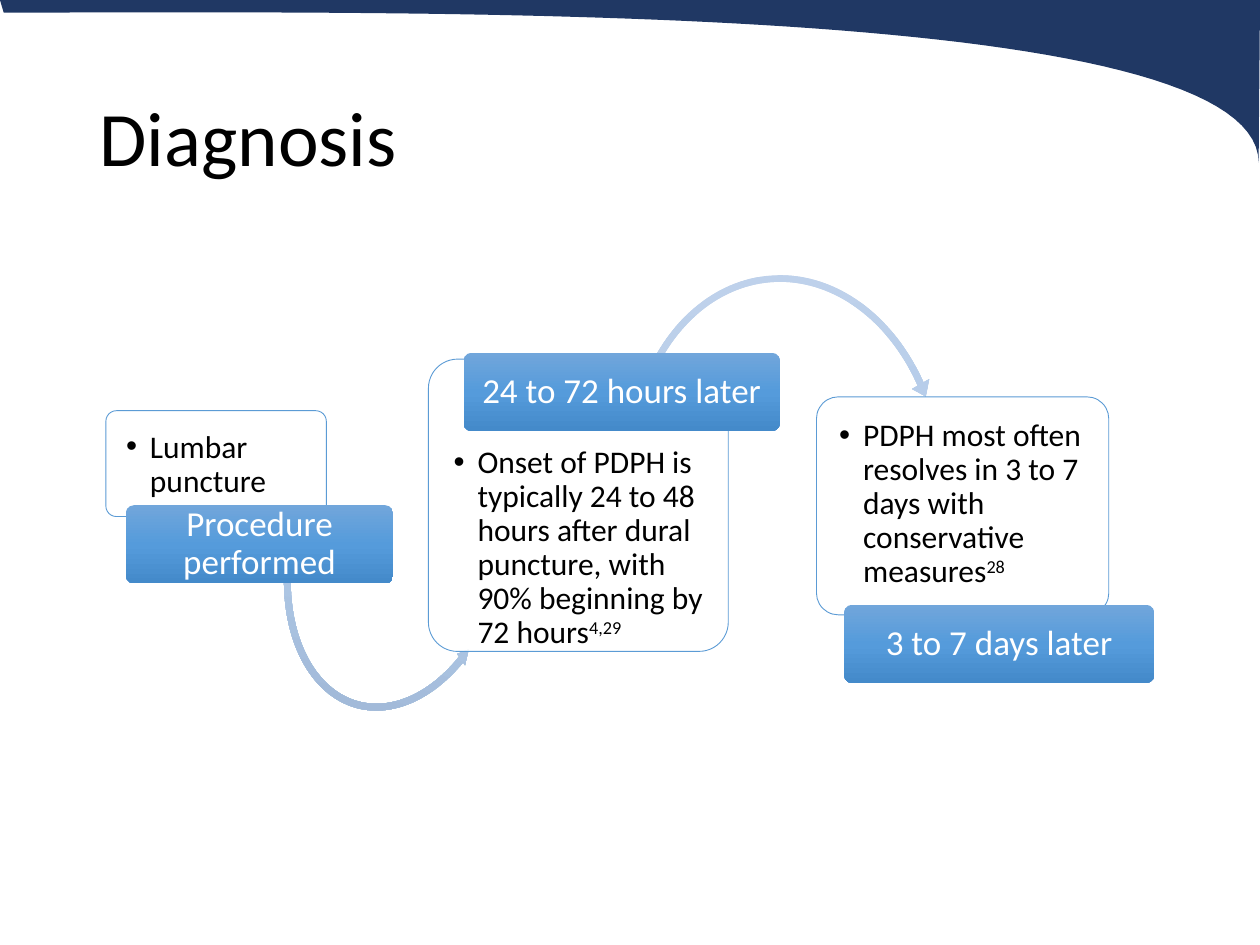
from copy import deepcopy

from lxml.etree import SubElement
from pptx import Presentation
from pptx.dml.color import RGBColor
from pptx.enum.shapes import MSO_SHAPE as Shape
from pptx.enum.text import MSO_ANCHOR as Anchor, MSO_AUTO_SIZE as AutoSize, PP_ALIGN as Align
from pptx.oxml.ns import qn
from pptx.util import Inches, Pt

COLORS = {
    "navy": "203864", "white": "FFFFFF", "black": "000000", "outline": "5B9BD5",
    "label_top": "71A6DB", "label_mid": "559BDB", "label_end": "448ACA",
    "arrow_top": "C0D2EB", "arrow_mid": "B3CBE9", "arrow_end": "9BB4D3",
}

STEPS = [
    {"card": (0.84, 3.26, 1.75, 0.84), "detail_box": (0.86, 3.28, 1.71, 0.62),
     "detail": "Lumbar puncture", "citation": "",
     "label_box": (1, 4.01, 2.12, 0.62), "label": "Procedure performed"},
    {"card": (3.4, 2.85, 2.38, 2.32), "detail_box": (3.46, 3.4, 2.27, 1.71),
     "detail": "Onset of PDPH is typically 24 to 48 hours after dural puncture, "
               "with 90% beginning by 72 hours", "citation": "4,29",
     "label_box": (3.68, 2.8, 2.51, 0.62), "label": "24 to 72 hours later"},
    {"card": (6.48, 3.15, 2.32, 1.73), "detail_box": (6.52, 3.19, 2.24, 1.28),
     "detail": "PDPH most often resolves in 3 to 7 days with conservative measures",
     "citation": "28",
     "label_box": (6.7, 4.8, 2.46, 0.62), "label": "3 to 7 days later"},
]

ARROWS = [
    {"kind": Shape.LEFT_CIRCULAR_ARROW, "box": (2.26, 3.02, 1.81, 2.67), "rotation": 14.6,
     "bend": (0.03, 3.25, 27.63, 96.87, 0.03)},
    {"kind": Shape.CIRCULAR_ARROW, "box": (4.93, 2.13, 2.62, 3.31), "rotation": 355.4,
     "bend": (0.02, 2.81, 197.97, 128.29, 0.03)},
]


def rgb(name):
    return RGBColor.from_string(COLORS[name])


def place(shape, box):
    shape.left, shape.top, shape.width, shape.height = map(Inches, box)


def write_text(shape, text, *, size, color, align=Align.LEFT, anchor=Anchor.MIDDLE,
               inset=(0.1, 0.05), bullet=False, superscript=""):
    frame = shape.text_frame
    frame.word_wrap = True
    frame.auto_size = AutoSize.NONE
    frame.vertical_anchor = anchor
    frame.margin_left = frame.margin_right = Inches(inset[0])
    frame.margin_top = frame.margin_bottom = Inches(inset[1])
    paragraph = frame.paragraphs[0]
    if bullet:
        properties = paragraph._p.get_or_add_pPr()
        properties.set("marL", str(Inches(0.19)))
        properties.set("indent", str(Inches(-0.19)))
        SubElement(properties, qn("a:buFont"), typeface="Arial")
        SubElement(properties, qn("a:buChar"), char="•")
    paragraph.alignment = align
    paragraph.line_spacing = 0.9
    paragraph.space_before = Pt(0)
    for part in filter(None, (text, superscript)):
        run = paragraph.add_run()
        run.text = part
        run.font.name = "Calibri"
        run.font.size = Pt(size)
        run.font.bold = False
        run.font.color.rgb = rgb(color)
    if superscript:
        run._r.get_or_add_rPr().set("baseline", "30000")


def fill_gradient(shape, family):
    shape.fill.gradient()
    shape.fill.gradient_angle = 270
    stop_list = shape._element.spPr.find(qn("a:gradFill")).find(qn("a:gsLst"))
    stop_list.insert(1, deepcopy(stop_list[0]))
    for index, part in enumerate(("top", "mid", "end")):
        stop = shape.fill.gradient_stops[index]
        stop.position = index / 2
        stop.color.rgb = rgb(f"{family}_{part}")


def add_plain_shape(slide, kind, box):
    shape = slide.shapes.add_shape(kind, *map(Inches, box))
    shape.shadow.inherit = False
    shape.line.fill.background()
    return shape


def add_card(slide, box):
    card = add_plain_shape(slide, Shape.ROUNDED_RECTANGLE, box)
    card.adjustments[0] = 0.1
    card.fill.solid()
    card.fill.fore_color.rgb = rgb("white")
    color = card._element.spPr.find(qn("a:solidFill"))[0]
    SubElement(color, qn("a:alpha"), val="90000")
    card.line.color.rgb = rgb("outline")
    card.line.width = Pt(0.5)


def add_label(slide, box, text):
    label = add_plain_shape(slide, Shape.ROUNDED_RECTANGLE, box)
    label.adjustments[0] = 0.1
    fill_gradient(label, "label")
    write_text(label, text, size=20, color="white", align=Align.CENTER, inset=(0.06, 0.05))


def add_arrow(slide, kind, box, rotation, bend):
    arrow = add_plain_shape(slide, kind, box)
    arrow.rotation = rotation
    for index, value in enumerate(bend):
        arrow.adjustments[index] = value
    fill_gradient(arrow, "arrow")


def curve_points(start, control_1, control_2, end, steps=60):
    for step in range(1, steps + 1):
        t = step / steps
        weights = ((1 - t) ** 3, 3 * t * (1 - t) ** 2, 3 * t ** 2 * (1 - t), t ** 3)
        yield tuple(
            sum(weight * value for weight, value in zip(weights, values))
            for values in zip(start, control_1, control_2, end)
        )


def add_swoosh(slide):
    corner, tip, tail = (10, 0), (9.99, 1.29), (0.03, 0.1)
    points = [
        corner,
        *curve_points(corner, (10, 0.14), (9.99, 1.15), tip),
        *curve_points(tip, (9.98, 0), (3.36, 0.1), tail),
    ]
    builder = slide.shapes.build_freeform(0, 0)
    builder.add_line_segments([(Inches(x), Inches(y)) for x, y in points], close=True)
    swoosh = builder.convert_to_shape()
    swoosh.shadow.inherit = False
    swoosh.fill.solid()
    swoosh.fill.fore_color.rgb = rgb("navy")
    swoosh.line.fill.background()


def add_detail(slide, placeholder, step):
    place(placeholder, step["detail_box"])
    write_text(placeholder, step["detail"], size=18, color="black", anchor=Anchor.TOP,
               inset=(0.14, 0.14), bullet=True, superscript=step["citation"])
    slide.shapes._spTree.append(placeholder._element)


def main():
    presentation = Presentation()
    presentation.slide_width, presentation.slide_height = Inches(10), Inches(7.5)
    slide = presentation.slides.add_slide(presentation.slide_layouts[4])
    title, *details, spare = list(slide.placeholders)
    slide.shapes._spTree.remove(spare._element)

    add_swoosh(slide)
    place(title, (0.69, 0.4, 8.62, 1.45))
    write_text(title, "Diagnosis", size=44, color="black")

    for index, (step, detail) in enumerate(zip(STEPS, details)):
        add_card(slide, step["card"])
        add_detail(slide, detail, step)
        if index < len(ARROWS):
            add_arrow(slide, **ARROWS[index])
        add_label(slide, step["label_box"], step["label"])

    presentation.save("out.pptx")


if __name__ == "__main__":
    main()
